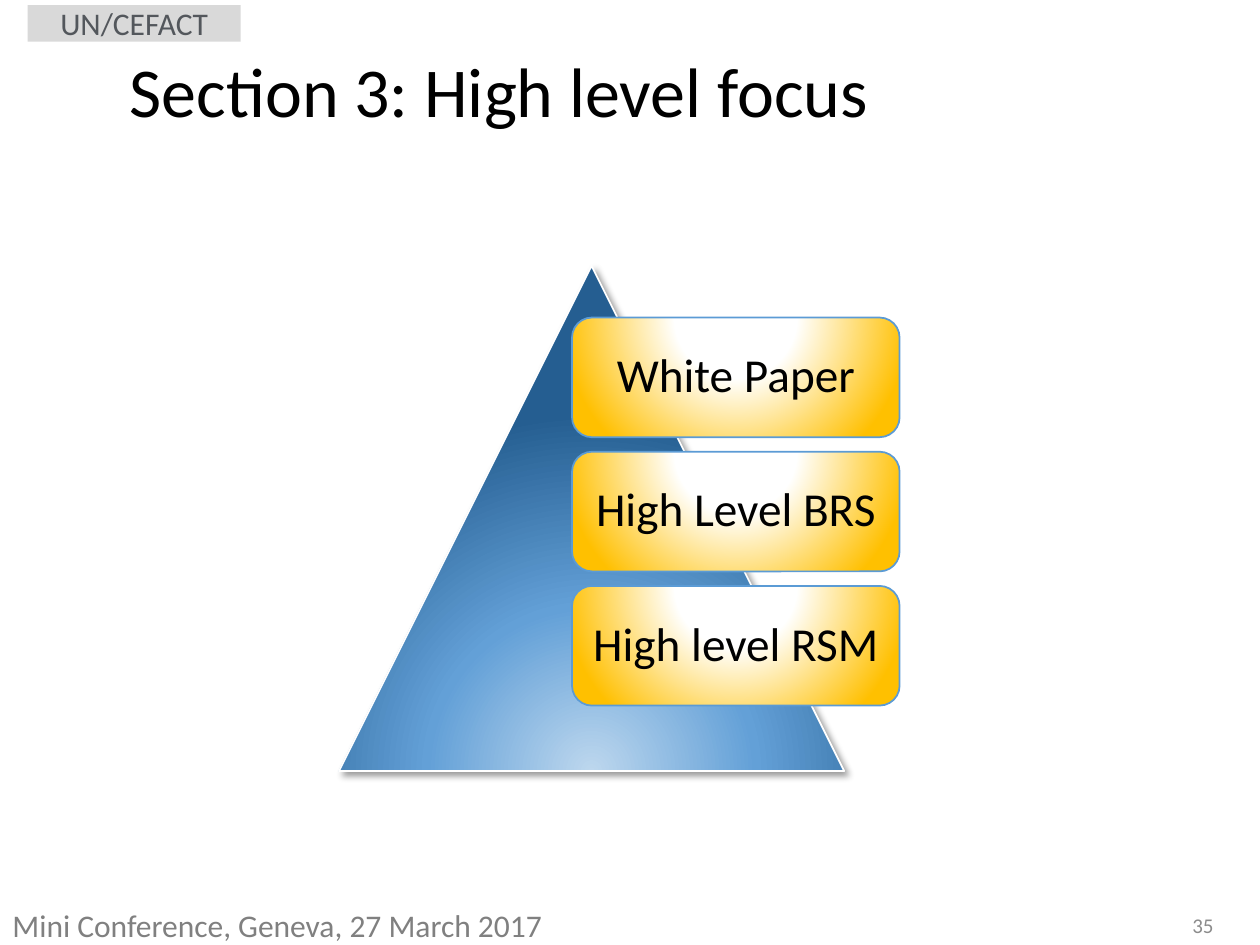
"""Build the high level focus slide: a pyramid with three stacked labels."""
from pptx import Presentation
from pptx.dml.color import RGBColor
from pptx.enum.shapes import MSO_SHAPE
from pptx.enum.text import MSO_ANCHOR, PP_ALIGN
from pptx.oxml import parse_xml
from pptx.oxml.ns import nsdecls
from pptx.util import Inches, Pt

WIDE, HIGH = 10, 7.5
COLORS = {
    "black": "000000", "white": "FFFFFF", "tag": "D9D9D9", "slate": "53575C",
    "gray": "808080", "page": "8C8C8C", "pale": "BDD7EE", "sky": "63A0D7",
    "navy": "255E91", "gold": "FFC000", "edge": "5B9BD5",
}
LABELS = ["White Paper", "High Level BRS", "High level RSM"]
LEFT, TOP, STEP = 4.54, 2.52, 1.065


def color(name):
    """Return the named colour."""
    return RGBColor.from_string(COLORS[name])


def place(item, left, top, width, height):
    """Set the position and size of an item in inches."""
    item.left, item.top = Inches(left), Inches(top)
    item.width, item.height = Inches(width), Inches(height)


def write(item, text, size=18, tint="black", align=PP_ALIGN.LEFT,
          anchor=MSO_ANCHOR.MIDDLE, space=1.0, inset=0.1):
    """Put formatted text into an item."""
    frame = item.text_frame
    frame.text = text
    frame.word_wrap = True
    frame.vertical_anchor = anchor
    frame.margin_left = frame.margin_right = Inches(inset)
    para = frame.paragraphs[0]
    para.alignment, para.line_spacing = align, space
    para.font.name, para.font.size = "Calibri", Pt(size)
    para.font.color.rgb = color(tint)


def glow(shape, stops, top):
    """Fill a shape with a circular gradient centred at a given height."""
    marks = "".join(
        f'<a:gs pos="{pos * 1000}"><a:srgbClr val="{COLORS[name]}"/></a:gs>'
        for pos, name in stops)
    shape._element.spPr.insert(2, parse_xml(
        f'<a:gradFill {nsdecls("a")} rotWithShape="1"><a:gsLst>{marks}</a:gsLst>'
        f'<a:path path="circle"><a:fillToRect l="50000" t="{top * 1000}" '
        f'r="50000" b="{(100 - top) * 1000}"/></a:path></a:gradFill>'))


def shade(shape):
    """Give a shape a soft shadow to the lower right."""
    shape._element.spPr.effectLst.append(parse_xml(
        f'<a:outerShdw {nsdecls("a")} blurRad="{Pt(4)}" dist="{Pt(3)}" '
        f'dir="2700000" rotWithShape="0"><a:srgbClr val="{COLORS["black"]}">'
        '<a:alpha val="40000"/></a:srgbClr></a:outerShdw>'))


def draw(slide, kind, box, line=None):
    """Add a preset shape with an optional outline."""
    shape = slide.shapes.add_shape(kind, *map(Inches, box))
    shape.shadow.inherit = False
    if line:
        shape.line.color.rgb = color(line)
        shape.line.width = Pt(1)
    else:
        shape.line.fill.background()
    return shape


def note(slide, text, box, **style):
    """Add a text box."""
    write(slide.shapes.add_textbox(*map(Inches, box)), text, **style)


def label(slide, row, text):
    """Add one golden label on its row of the stack."""
    box = (LEFT, TOP + row * STEP, 2.6, 0.95)
    shape = draw(slide, MSO_SHAPE.ROUNDED_RECTANGLE, box, "edge")
    glow(shape, [(0, "white"), (35, "white"), (100, "gold")], -80)
    write(shape, text, size=27, align=PP_ALIGN.CENTER, space=0.9)


def main():
    """Build and save the slide."""
    deck = Presentation()
    deck.slide_width, deck.slide_height = Inches(WIDE), Inches(HIGH)
    slide = deck.slides.add_slide(deck.slide_layouts[5])

    tag = draw(slide, MSO_SHAPE.RECTANGLE, (0.22, 0.04, 1.69, 0.29))
    tag.fill.solid()
    tag.fill.fore_color.rgb = color("tag")
    write(tag, "UN/CEFACT", tint="slate", align=PP_ALIGN.CENTER)

    title = slide.shapes.title
    place(title, 0.93, 0.41, 9.49, 0.69)
    write(title, "Section 3: High level focus", size=40, space=0.9)

    cone = draw(slide, MSO_SHAPE.ISOSCELES_TRIANGLE, (2.69, 2.11, 4.01, 4.01), "white")
    glow(cone, [(0, "pale"), (46, "sky"), (100, "navy")], 130)
    shade(cone)
    for row, text in enumerate(LABELS):
        label(slide, row, text)

    base = HIGH - 0.36
    note(slide, "35", (6.73, base, 3, 0.4), size=12, tint="page", align=PP_ALIGN.RIGHT)
    note(slide, "Mini Conference, Geneva, 27 March 2017", (0, base, 5.68, 0.4),
         tint="gray", anchor=MSO_ANCHOR.TOP)
    deck.save("out.pptx")


if __name__ == "__main__":
    main()
